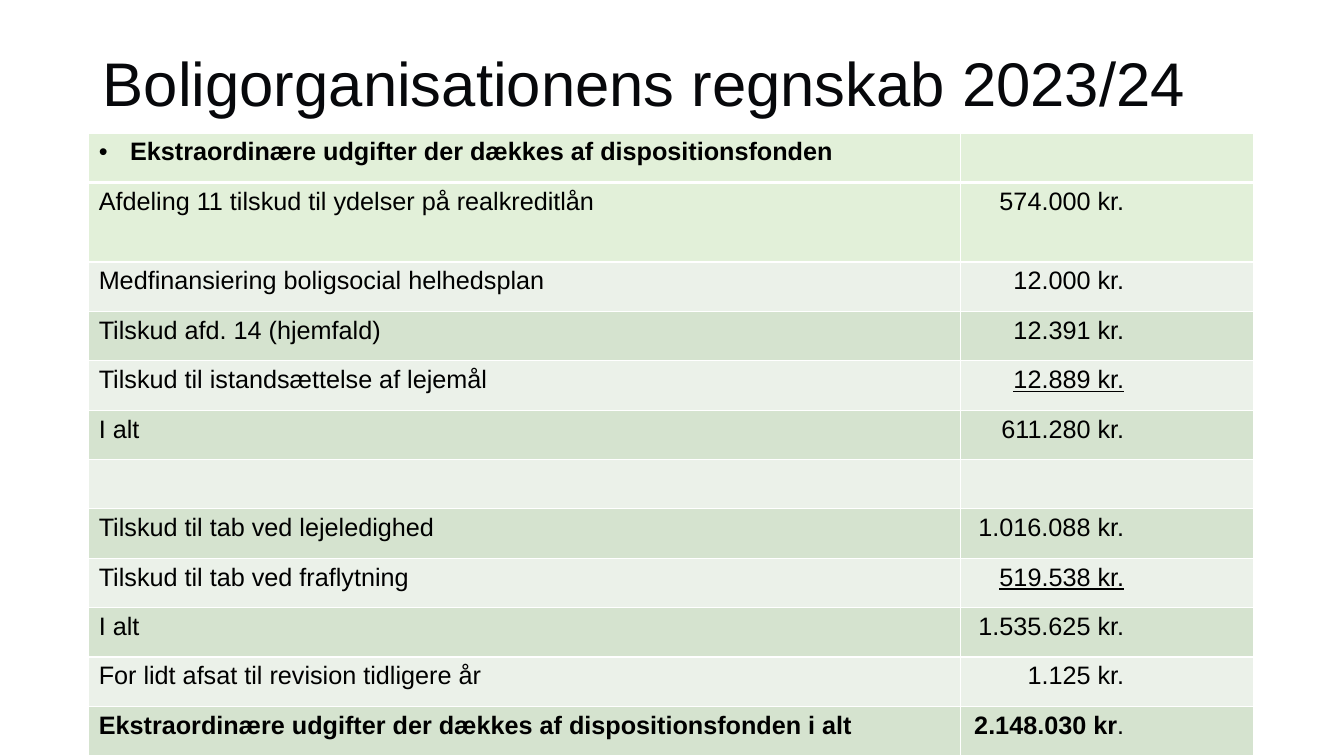
from lxml import etree
from pptx import Presentation
from pptx.dml.color import RGBColor
from pptx.enum.text import MSO_ANCHOR, MSO_AUTO_SIZE, PP_ALIGN
from pptx.oxml.ns import qn
from pptx.util import Inches, Pt

LEFT = PP_ALIGN.LEFT
MIDDLE = MSO_ANCHOR.MIDDLE
NO_AUTOFIT = MSO_AUTO_SIZE.NONE
TITLE_ONLY = 5

TITLE_COLOR = RGBColor(0x07, 0x08, 0x0B)
BLACK = RGBColor(0x00, 0x00, 0x00)
WHITE = RGBColor(0xFF, 0xFF, 0xFF)
HEADER_GREEN = RGBColor(0xE2, 0xF0, 0xD9)
BANDS = (RGBColor(0xEB, 0xF1, 0xE9), RGBColor(0xD5, 0xE3, 0xCF))

TITLE_FORMAT = {"name": "Arial", "size": Pt(44)}
CELL_FORMAT = {"name": "Arial", "size": Pt(18)}
BOLD = {"bold": True}
UNDERLINE = {"underline": True}

HEADING = "Ekstraordinære udgifter der dækkes af dispositionsfonden"
ROWS = [
    (HEADING, BOLD, []),
    ("Afdeling 11 tilskud til ydelser på realkreditlån", {}, [("574.000 kr.", {})]),
    ("Medfinansiering boligsocial helhedsplan", {}, [("12.000 kr.", {})]),
    ("Tilskud afd. 14 (hjemfald)", {}, [("12.391 kr.", {})]),
    ("Tilskud til istandsættelse af lejemål", {}, [("12.889 kr.", UNDERLINE)]),
    ("I alt", {}, [("611.280 kr.", {})]),
    ("", {}, []),
    ("Tilskud til tab ved lejeledighed", {}, [("1.016.088 kr.", {})]),
    ("Tilskud til tab ved fraflytning", {}, [("519.538 kr.", UNDERLINE)]),
    ("I alt", {}, [("1.535.625 kr.", {})]),
    ("For lidt afsat til revision tidligere år", {}, [("1.125 kr.", {})]),
    (HEADING + " i alt", BOLD, [("2.148.030 kr", BOLD), (".", {})]),
]


class SlideBuilder:
    """Holds the style and the current slide, and adds elements to it."""

    def __init__(self, slide):
        self.slide = slide

    def format_font(self, font, values, color):
        """Apply format values and a colour to a font."""
        for name, value in values.items():
            setattr(font, name, value)
        font.color.rgb = color

    def add_title(self, text, left, top, width, height):
        """Place and fill the title placeholder."""
        title = self.slide.shapes.title
        title.left, title.top = Inches(left), Inches(top)
        title.width, title.height = Inches(width), Inches(height)
        frame = title.text_frame
        frame.text = text
        frame.auto_size = NO_AUTOFIT
        frame.vertical_anchor = MIDDLE
        paragraph = frame.paragraphs[0]
        paragraph.alignment = LEFT
        paragraph.line_spacing = 0.9
        self.format_font(paragraph.runs[0].font, TITLE_FORMAT, TITLE_COLOR)

    def add_bullet(self, paragraph, indent):
        """Give a paragraph a hanging bullet."""
        properties = paragraph._p.get_or_add_pPr()
        properties.set("marL", str(Inches(indent)))
        properties.set("indent", str(-Inches(indent)))
        etree.SubElement(properties, qn("a:buFont"), typeface="Arial")
        etree.SubElement(properties, qn("a:buChar"), char="•")

    def add_right_tab(self, paragraph, position):
        """Give a paragraph a right-aligned tab stop."""
        properties = paragraph._p.get_or_add_pPr()
        tabs = etree.SubElement(properties, qn("a:tabLst"))
        etree.SubElement(tabs, qn("a:tab"), pos=str(Inches(position)), algn="r")

    def add_runs(self, paragraph, runs):
        """Add formatted runs to a paragraph."""
        for text, values in runs:
            run = paragraph.add_run()
            run.text = text
            self.format_font(run.font, {**CELL_FORMAT, **values}, BLACK)

    def style_cell(self, cell, fill, top, bottom):
        """Fill a cell and draw its white borders."""
        cell.fill.solid()
        cell.fill.fore_color.rgb = fill
        properties = cell._tc.get_or_add_tcPr()
        sides = (("a:lnL", 1), ("a:lnR", 1), ("a:lnT", top), ("a:lnB", bottom))
        for index, (tag, width) in enumerate(sides):
            line = etree.Element(qn(tag), w=str(Pt(width)))
            solid = etree.SubElement(line, qn("a:solidFill"))
            etree.SubElement(solid, qn("a:srgbClr"), val=str(WHITE))
            properties.insert(index, line)

    def add_accounts(self, rows, left, top, columns, heights):
        """Add the table of labels and amounts."""
        frame = self.slide.shapes.add_table(
            len(rows), len(columns), Inches(left), Inches(top),
            Inches(sum(columns)), Inches(sum(heights)))
        table = frame.table
        table.first_row = table.horz_banding = False
        for column, width in zip(table.columns, columns):
            column.width = Inches(width)
        for index, (label, label_format, amount) in enumerate(rows):
            table.rows[index].height = Inches(heights[index])
            fill = HEADER_GREEN if index < 2 else BANDS[index % 2]
            for column in range(len(columns)):
                self.style_cell(table.cell(index, column), fill,
                                3 if index == 1 else 1, 3 if index == 0 else 1)
            label_paragraph = table.cell(index, 0).text_frame.paragraphs[0]
            if index == 0:
                self.add_bullet(label_paragraph, 0.31)
            if label:
                self.add_runs(label_paragraph, [(label, label_format)])
            if amount:
                amount_paragraph = table.cell(index, 1).text_frame.paragraphs[0]
                self.add_right_tab(amount_paragraph, 1.52)
                first_text, first_format = amount[0]
                self.add_runs(amount_paragraph,
                              [("\t" + first_text, first_format), *amount[1:]])


def main():
    """Build and save the accounts slide."""
    presentation = Presentation()
    presentation.slide_width = Inches(13.33)
    presentation.slide_height = Inches(7.5)
    slide = presentation.slides.add_slide(presentation.slide_layouts[TITLE_ONLY])
    builder = SlideBuilder(slide)
    builder.add_title("Boligorganisationens regnskab 2023/24", 0.92, 0.4, 11.5, 0.92)
    heights = [0.79 if index == 1 else 0.49 for index in range(len(ROWS))]
    builder.add_accounts(ROWS, 0.88, 1.32, (8.65, 2.9), heights)
    presentation.save("out.pptx")


if __name__ == "__main__":
    main()
